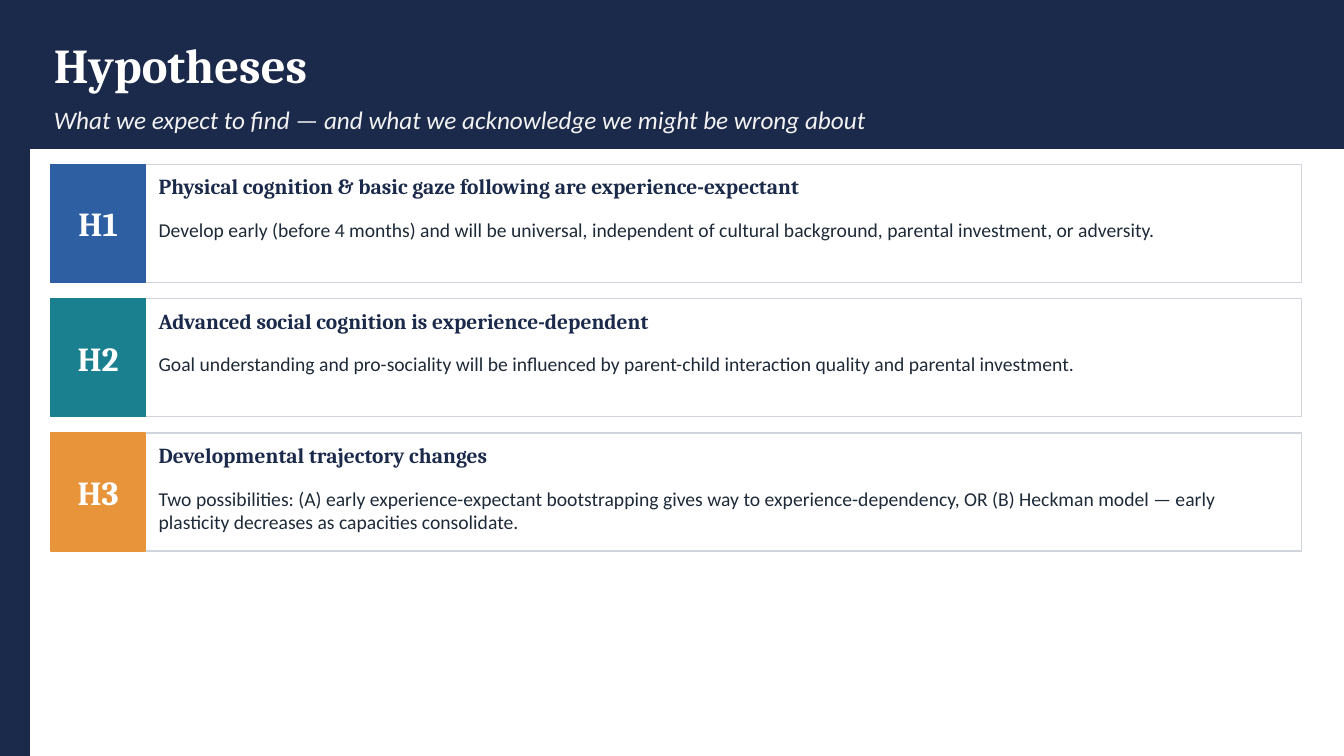
from pptx import Presentation
from pptx.dml.color import RGBColor
from pptx.enum.shapes import MSO_SHAPE as Shape
from pptx.enum.text import MSO_ANCHOR as Anchor, MSO_AUTO_SIZE as AutoSize, PP_ALIGN as Align
from pptx.util import Pt

COLORS = {
    "navy": "1B2A4A", "white": "FFFFFF", "pale": "F2F2F2", "border": "D1D5DB",
    "ink": "1E2A38", "blue": "2E5FA3", "teal": "1A7F8E", "orange": "E8943A",
}
SERIF, SANS = "Cambria", "Calibri"
SLIDE_W, SLIDE_H = 960, 540
SIDEBAR_W, HEADER_H = 21.2, 105.8
CARD_LEFT, CARD_TOP, CARD_W, CARD_H = 36.5, 117.3, 893, 84.4
CARD_PITCH = 96

HYPOTHESES = [
    ("H1", "blue", "Physical cognition & basic gaze following are experience-expectant",
     "Develop early (before 4 months) and will be universal, independent of "
     "cultural background, parental investment, or adversity."),
    ("H2", "teal", "Advanced social cognition is experience-dependent",
     "Goal understanding and pro-sociality will be influenced by parent-child "
     "interaction quality and parental investment."),
    ("H3", "orange", "Developmental trajectory changes",
     "Two possibilities: (A) early experience-expectant bootstrapping gives way to "
     "experience-dependency, OR (B) Heckman model — early plasticity decreases as "
     "capacities consolidate."),
]


def rgb(name):
    return RGBColor.from_string(COLORS[name])


def add_panel(slide, left, top, width, height, fill, border=None):
    panel = slide.shapes.add_shape(Shape.RECTANGLE, Pt(left), Pt(top), Pt(width), Pt(height))
    panel.shadow.inherit = False
    panel.fill.solid()
    panel.fill.fore_color.rgb = rgb(fill)
    panel.line.color.rgb = rgb(border or fill)
    panel.line.width = Pt(1)
    return panel


def write(shape, text, font, size, color, bold=False, italic=False,
          align=Align.LEFT, anchor=Anchor.TOP):
    """Fill the shape with one formatted run, without insets."""
    frame = shape.text_frame
    frame.word_wrap = True
    frame.auto_size = AutoSize.NONE
    frame.vertical_anchor = anchor
    frame.margin_left = frame.margin_right = frame.margin_top = frame.margin_bottom = 0
    paragraph = frame.paragraphs[0]
    paragraph.alignment = align
    run = paragraph.add_run()
    run.text = text
    run.font.name, run.font.size = font, Pt(size)
    run.font.bold, run.font.italic = bold, italic
    run.font.color.rgb = rgb(color)


def add_text(slide, left, top, width, height, text, *style, **options):
    box = slide.shapes.add_textbox(Pt(left), Pt(top), Pt(width), Pt(height))
    write(box, text, *style, **options)


def add_header(slide, left, top, width, height):
    add_panel(slide, left, top, width, height, "navy")
    title = slide.shapes.title
    slide.shapes.element.append(title.element)  # bring the title in front of the band
    text_left = left + 17.2
    title.left, title.top = Pt(text_left), Pt(top + 9.6)
    title.width, title.height = Pt(CARD_W), Pt(72)
    write(title, "Hypotheses", SERIF, 34.7, "white", bold=True, anchor=Anchor.MIDDLE)
    add_text(slide, text_left, top + 72, CARD_W, 26.9,
             "What we expect to find — and what we acknowledge we might be wrong about",
             SANS, 18, "pale", italic=True, anchor=Anchor.MIDDLE)


def add_hypothesis(slide, left, top, width, height, label, color, claim, detail):
    badge_w, text_left, text_w = 67.2, left + 76.8, width - 91.8
    add_panel(slide, left, top, width, height, "white", "border")
    badge = add_panel(slide, left, top, badge_w, height, color)
    write(badge, label, SERIF, 24, "white", bold=True,
          align=Align.CENTER, anchor=Anchor.MIDDLE)
    add_text(slide, text_left, top + 6.7, text_w, 28.8, claim, SERIF, 15.3, "navy", bold=True)
    add_text(slide, text_left, top + 38.4, text_w, 40.3, detail, SANS, 14, "ink")


def main():
    deck = Presentation()
    deck.slide_width, deck.slide_height = Pt(SLIDE_W), Pt(SLIDE_H)
    slide = deck.slides.add_slide(deck.slide_layouts.get_by_name("Title Only"))
    slide.background.fill.solid()
    slide.background.fill.fore_color.rgb = rgb("white")
    add_panel(slide, 0, 0, SIDEBAR_W, SLIDE_H, "navy")
    add_header(slide, SIDEBAR_W, 0, SLIDE_W - SIDEBAR_W, HEADER_H)
    for row, hypothesis in enumerate(HYPOTHESES):
        add_hypothesis(slide, CARD_LEFT, CARD_TOP + row * CARD_PITCH, CARD_W, CARD_H,
                       *hypothesis)
    deck.save("out.pptx")


if __name__ == "__main__":
    main()
